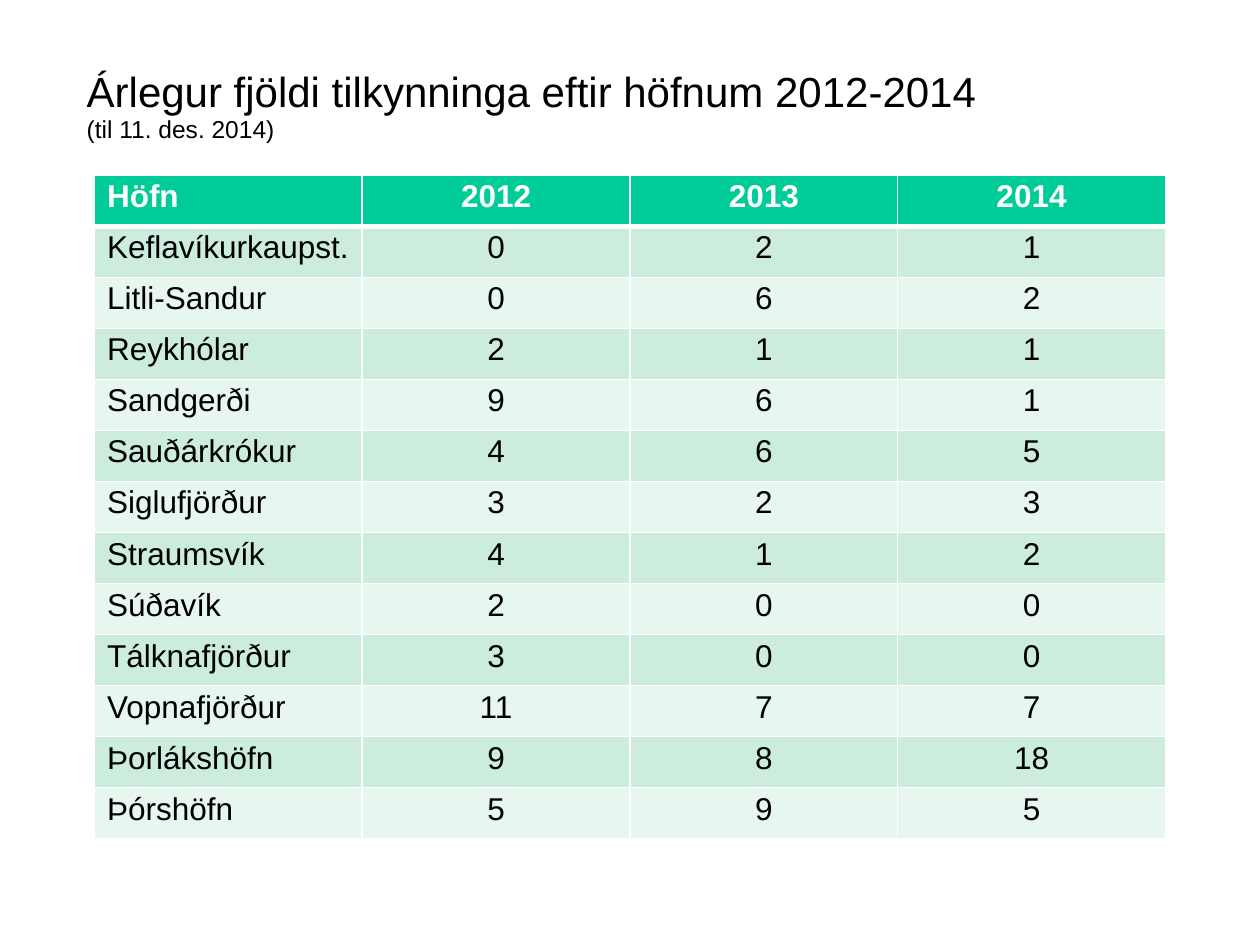
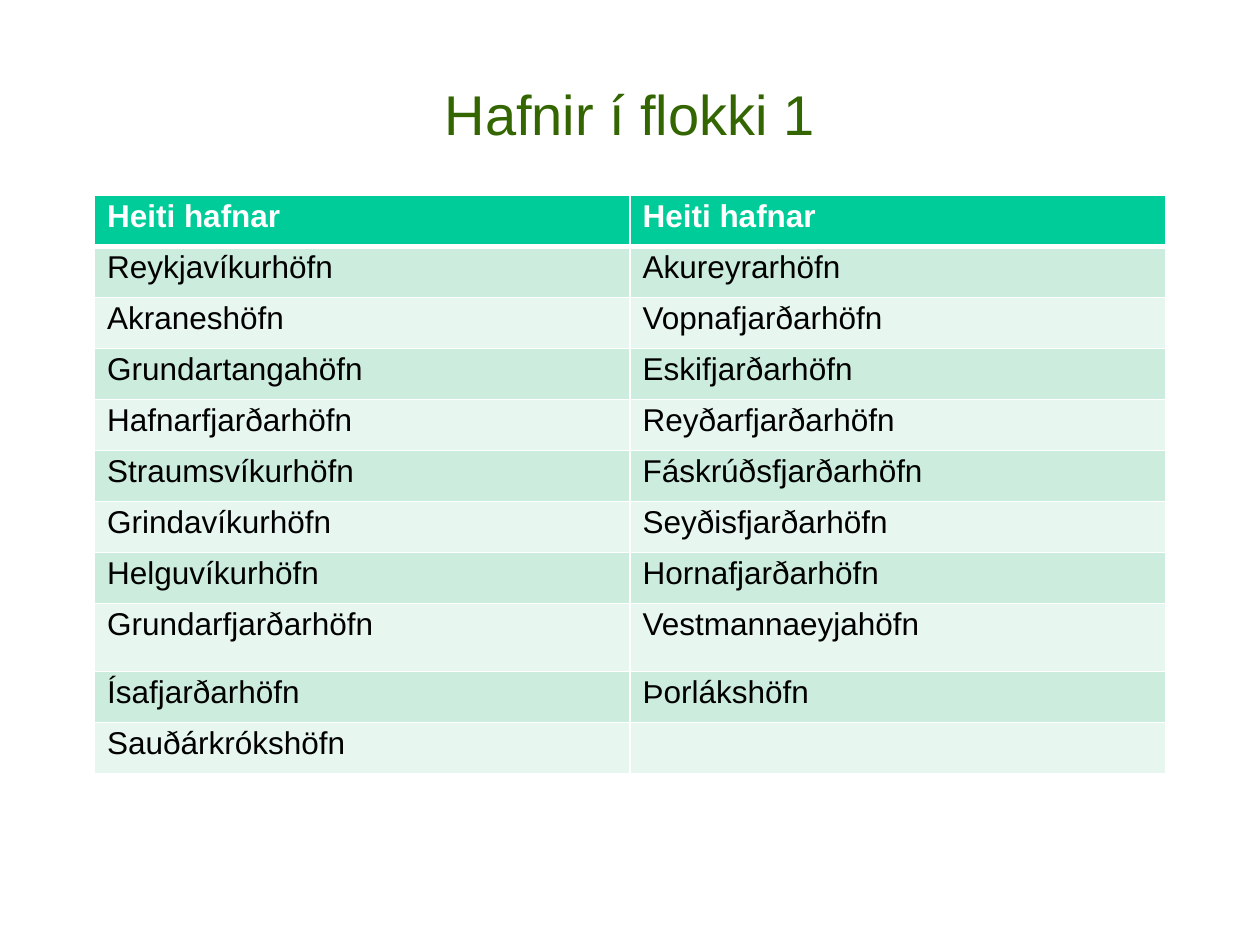
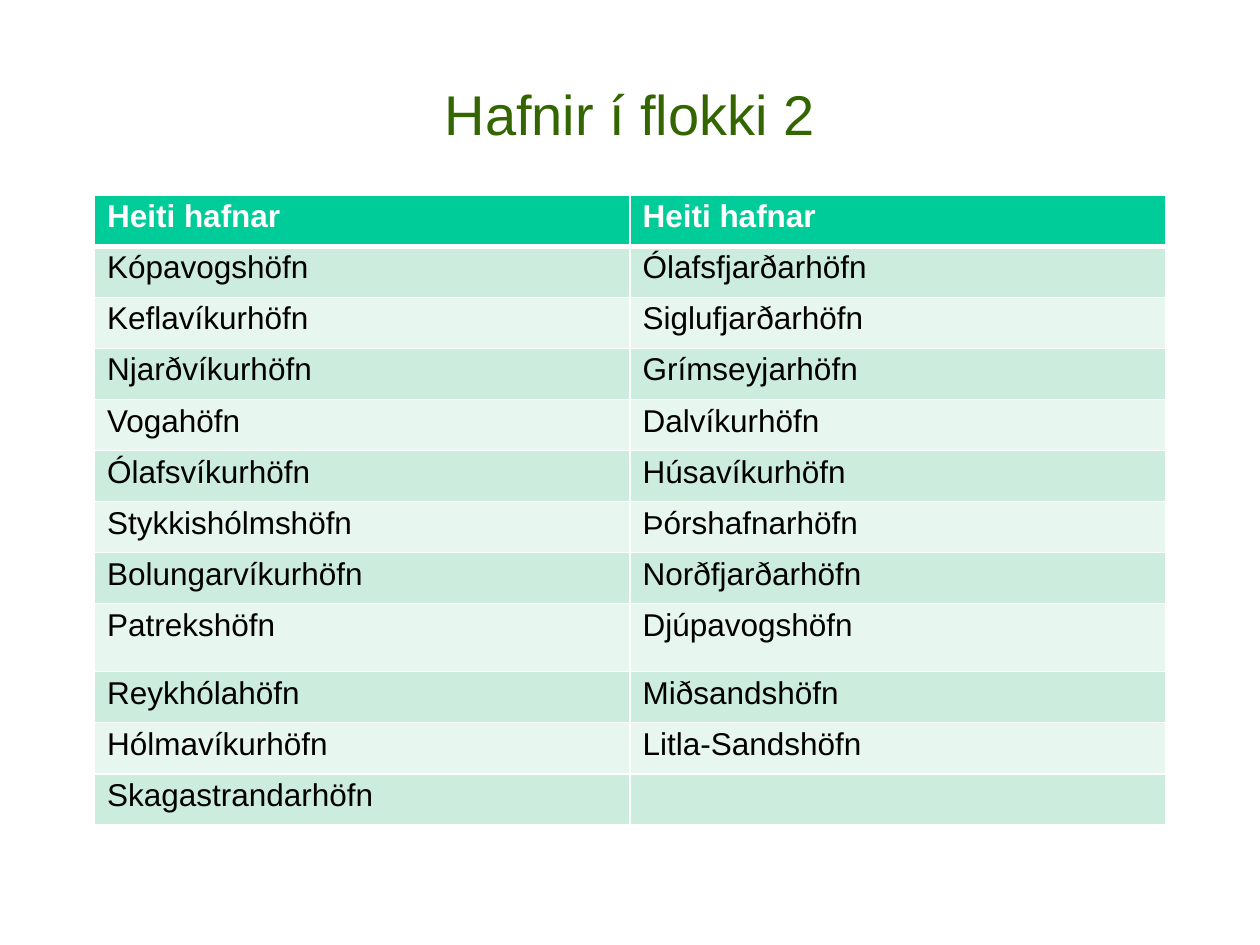
from lxml import etree
from pptx import Presentation
from pptx import util as u
from pptx.dml import color
from pptx.enum import text
from pptx.oxml import ns

COLORS = {
    "header": "00CC99",
    "band_dark": "CCECDE",
    "band_light": "E7F6EF",
    "title": "336600",
    "ink": "000000",
    "white": "FFFFFF",
}
FONT = "Arial"
LINE_SPACING = 0.93
TABLE_LEFT, TABLE_WIDTH = 0.75, 8.5
TITLE_HEIGHT = 0.98
LEFT, CENTER = text.PP_ALIGN.LEFT, text.PP_ALIGN.CENTER


def rgb(name):
    return color.RGBColor.from_string(COLORS[name])


class DeckBuilder:
    """Holds the shared style and the slide being built."""

    def __init__(self):
        self.deck = Presentation()
        self.deck.slide_width = u.Inches(10)
        self.deck.slide_height = u.Inches(7.5)
        self.page = None

    def add_page(self):
        self.page = self.deck.slides.add_slide(self.deck.slide_layouts[6])

    def format_para(self, para, align):
        for name, value in {"alignment": align, "line_spacing": LINE_SPACING}.items():
            setattr(para, name, value)

    def add_span(self, para, words, size, ink, bold=False):
        span = para.add_run()
        span.text = words
        for name, value in {"name": FONT, "size": u.Pt(size), "bold": bold}.items():
            setattr(span.font, name, value)
        span.font.color.rgb = rgb(ink)

    def add_title(self, lines, left=0.75, top=0.44, ink="title", align=CENTER):
        """Each line is a (words, size) pair."""
        box = self.page.shapes.add_textbox(
            u.Inches(left), u.Inches(top), u.Inches(TABLE_WIDTH), u.Inches(TITLE_HEIGHT))
        frame = box.text_frame
        frame.word_wrap = True
        frame.vertical_anchor = text.MSO_ANCHOR.MIDDLE
        para = frame.paragraphs[0]
        self.format_para(para, align)
        for index, (words, size) in enumerate(lines):
            if index:
                para.add_line_break()
            self.add_span(para, words, size, ink)

    def add_borders(self, cell, top, bottom):
        props = cell._tc.get_or_add_tcPr()
        for side, points in {"L": 1, "R": 1, "T": top, "B": bottom}.items():
            line = etree.SubElement(props, ns.qn(f"a:ln{side}"), w=str(u.Pt(points)))
            fill = etree.SubElement(line, ns.qn("a:solidFill"))
            etree.SubElement(fill, ns.qn("a:srgbClr"), val=COLORS["white"])

    def add_table(self, rows, top, height, tall_rows=None, number_align=LEFT):
        """Rows share the height evenly, apart from tall_rows {index: inches}."""
        tall_rows = tall_rows or {}
        columns = len(rows[0])
        table = self.page.shapes.add_table(
            len(rows), columns, u.Inches(TABLE_LEFT), u.Inches(top),
            u.Inches(TABLE_WIDTH), u.Inches(height)).table
        table.horz_banding = False
        for column in table.columns:
            column.width = u.Inches(TABLE_WIDTH / columns)
        even = (height - sum(tall_rows.values())) / (len(rows) - len(tall_rows))
        for r, values in enumerate(rows):
            table.rows[r].height = u.Inches(tall_rows.get(r, even))
            band = "header" if r == 0 else ("band_light", "band_dark")[r % 2]
            for c, value in enumerate(values):
                cell = table.cell(r, c)
                self.add_borders(cell, top=3 if r == 1 else 1, bottom=3 if r == 0 else 1)
                cell.fill.solid()
                cell.fill.fore_color.rgb = rgb(band)
                para = cell.text_frame.paragraphs[0]
                self.format_para(para, number_align if c else LEFT)
                if value != "":
                    self.add_span(para, str(value), 18, "ink" if r else "white", bold=r == 0)

    def add_group_page(self, number, harbours, height):
        """A titled page listing the harbours of one group in two columns."""
        self.add_page()
        self.add_title([(f"Hafnir í flokki {number}", 32)])
        self.add_table([("Heiti hafnar",) * 2] + harbours, 1.55, height, tall_rows={8: 0.54})


# Notifications per harbour and year
NOTIFICATIONS = [
    ("Höfn", 2012, 2013, 2014),
    ("Keflavíkurkaupst.", 0, 2, 1),
    ("Litli-Sandur", 0, 6, 2),
    ("Reykhólar", 2, 1, 1),
    ("Sandgerði", 9, 6, 1),
    ("Sauðárkrókur", 4, 6, 5),
    ("Siglufjörður", 3, 2, 3),
    ("Straumsvík", 4, 1, 2),
    ("Súðavík", 2, 0, 0),
    ("Tálknafjörður", 3, 0, 0),
    ("Vopnafjörður", 11, 7, 7),
    ("Þorlákshöfn", 9, 8, 18),
    ("Þórshöfn", 5, 9, 5),
]

# Harbours by group
GROUP_ONE = [
    ("Reykjavíkurhöfn", "Akureyrarhöfn"),
    ("Akraneshöfn", "Vopnafjarðarhöfn"),
    ("Grundartangahöfn", "Eskifjarðarhöfn"),
    ("Hafnarfjarðarhöfn", "Reyðarfjarðarhöfn"),
    ("Straumsvíkurhöfn", "Fáskrúðsfjarðarhöfn"),
    ("Grindavíkurhöfn", "Seyðisfjarðarhöfn"),
    ("Helguvíkurhöfn", "Hornafjarðarhöfn"),
    ("Grundarfjarðarhöfn", "Vestmannaeyjahöfn"),
    ("Ísafjarðarhöfn", "Þorlákshöfn"),
    ("Sauðárkrókshöfn", ""),
]
GROUP_TWO = [
    ("Kópavogshöfn", "Ólafsfjarðarhöfn"),
    ("Keflavíkurhöfn", "Siglufjarðarhöfn"),
    ("Njarðvíkurhöfn", "Grímseyjarhöfn"),
    ("Vogahöfn", "Dalvíkurhöfn"),
    ("Ólafsvíkurhöfn", "Húsavíkurhöfn"),
    ("Stykkishólmshöfn", "Þórshafnarhöfn"),
    ("Bolungarvíkurhöfn", "Norðfjarðarhöfn"),
    ("Patrekshöfn", "Djúpavogshöfn"),
    ("Reykhólahöfn", "Miðsandshöfn"),
    ("Hólmavíkurhöfn", "Litla-Sandshöfn"),
    ("Skagastrandarhöfn", ""),
]


def main():
    builder = DeckBuilder()

    # Yearly notifications
    builder.add_page()
    builder.add_title(
        [("Árlegur fjöldi tilkynninga eftir höfnum 2012-2014", 24), ("(til 11. des. 2014)", 14)],
        left=0.59, top=0.36, ink="ink", align=LEFT)
    builder.add_table(NOTIFICATIONS, 1.39, 5.27, number_align=CENTER)

    # Harbour groups
    builder.add_group_page(1, GROUP_ONE, 4.59)
    builder.add_group_page(2, GROUP_TWO, 5)

    builder.deck.save("out.pptx")


if __name__ == "__main__":
    main()
